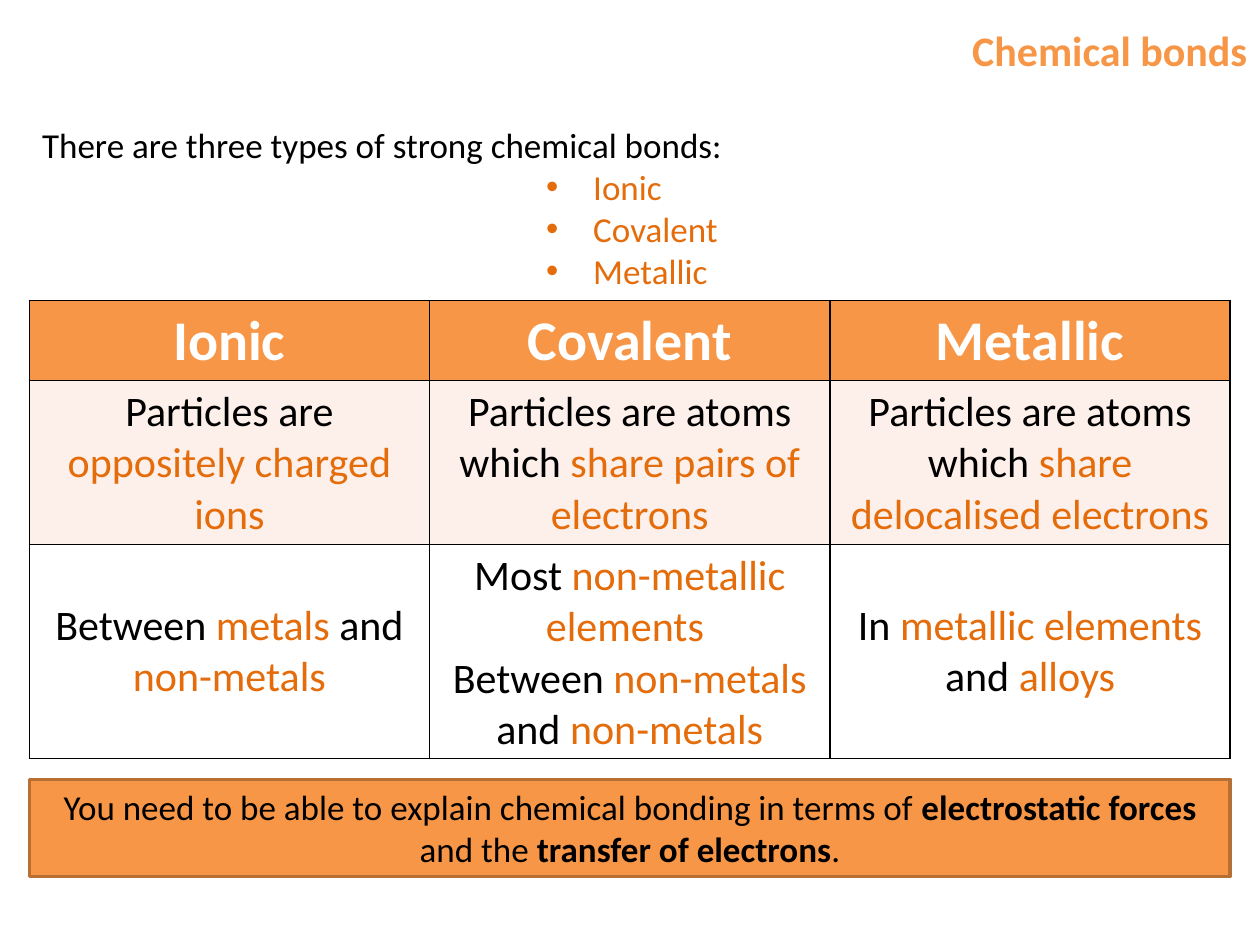
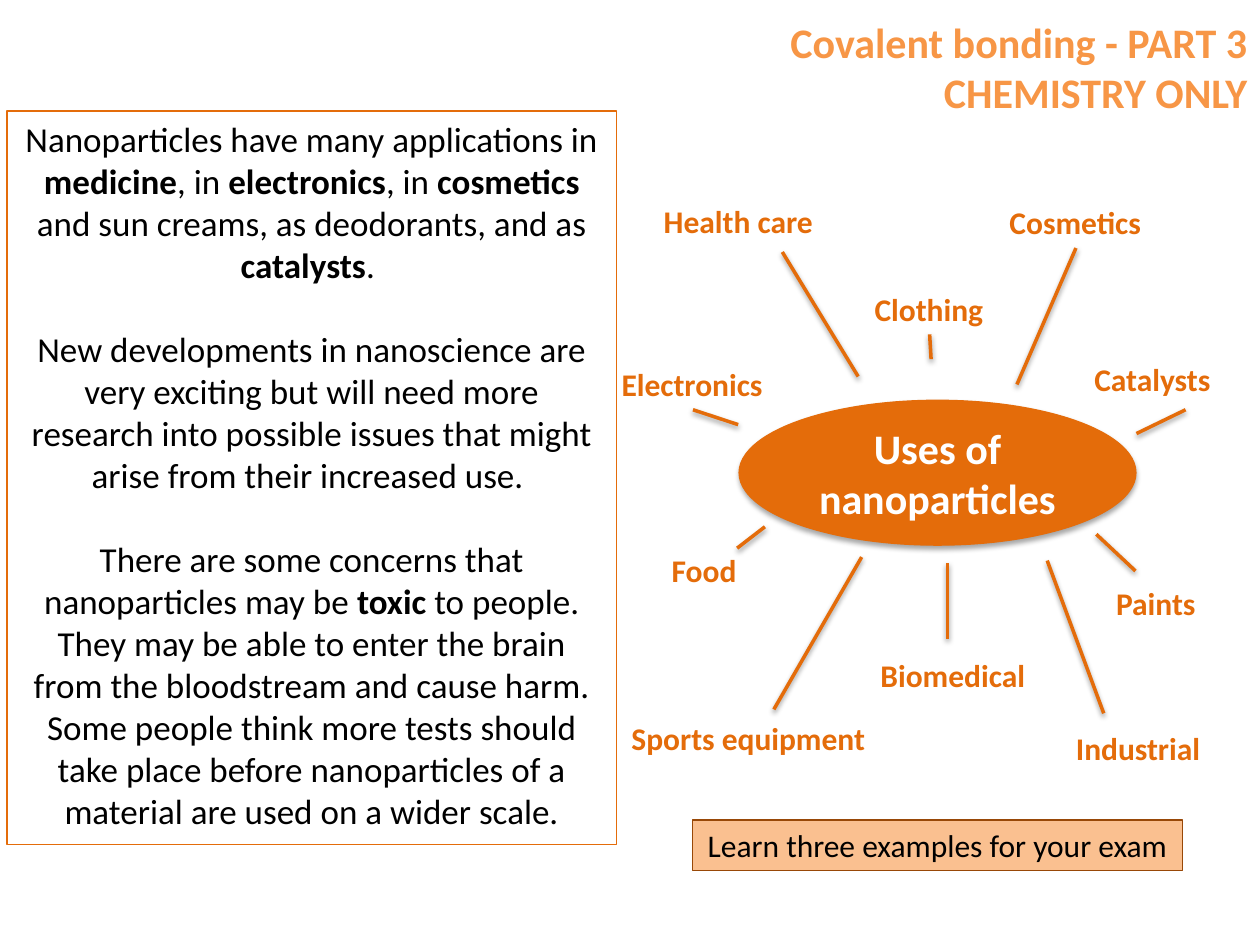
import pptx
import pptx.dml.color
import pptx.enum.shapes
import pptx.enum.text
import pptx.oxml
import pptx.oxml.ns
import pptx.util
from lxml import etree

Cm = pptx.util.Cm
Pt = pptx.util.Pt
RGBColor = pptx.dml.color.RGBColor
ALIGN = pptx.enum.text.PP_ALIGN
ANCHOR = pptx.enum.text.MSO_ANCHOR
FIT = pptx.enum.text.MSO_AUTO_SIZE
SHAPE = pptx.enum.shapes.MSO_SHAPE
qn = pptx.oxml.ns.qn

ORANGE = RGBColor(0xF7, 0x96, 0x46)
DARK_ORANGE = RGBColor(0xE4, 0x6C, 0x0A)
BANNER_EDGE = RGBColor(0xB7, 0x6F, 0x34)
PEACH = RGBColor(0xFA, 0xC0, 0x90)
BROWN = RGBColor(0x98, 0x48, 0x07)
PALE = RGBColor(0xFD, 0xEF, 0xE9)
WHITE = RGBColor(0xFF, 0xFF, 0xFF)
BLACK = RGBColor(0, 0, 0)

BODY = dict(name="Calibri", size=Pt(20), bold=False, color=BLACK)
STRONG = dict(BODY, bold=True)
LIST_ITEM = dict(BODY, color=DARK_ORANGE)
TITLE = dict(STRONG, size=Pt(24), color=ORANGE)
HEADER = dict(STRONG, size=Pt(32), color=WHITE)
CELL = dict(BODY, size=Pt(24))
CELL_KEY = dict(CELL, color=DARK_ORANGE)
HUB = dict(STRONG, size=Pt(24), color=WHITE)
LABEL = dict(STRONG, size=Pt(18), color=DARK_ORANGE)
NOTE = dict(BODY, size=Pt(18))

BOND_TABLE = [
    ["Ionic", "Covalent", "Metallic"],
    ["Particles are |oppositely charged ions",
     "Particles are atoms which |share pairs of electrons",
     "Particles are atoms which |share delocalised electrons"],
    ["Between |metals| and |non-metals",
     "Most |non-metallic elements \nBetween |non-metals| and |non-metals",
     "In |metallic elements| and |alloys"],
]

NANO_TEXT = [
    "Nanoparticles have many applications in |medicine|, in |electronics|, in "
    "|cosmetics |and sun creams, as deodorants, and as |catalysts|. ",
    "New developments in nanoscience are very exciting but will need more research "
    "into possible issues that might arise from their increased use. ",
    "There are some concerns that nanoparticles may be| toxic |to people. They may be "
    "able to enter the brain from the bloodstream and cause harm. Some people think more "
    "tests should take place before nanoparticles of a material are used on a wider scale.",
]

USES = [
    ("Health care", (13.13, 3.95, 3.56), (17.3, 7.59, 15.77, 5.08)),
    ("Clothing", (17.38, 5.72, 2.72), (18.75, 6.76, 18.77, 7.24)),
    ("Electronics", (12.28, 7.24, 3.38), (13.97, 8.26, 14.88, 8.56)),
    ("Sports equipment", (12.48, 14.38, 5.26), (17.37, 11.23, 15.6, 14.3)),
    ("Cosmetics", (20.1, 3.96, 3.18), (20.5, 7.75, 21.69, 5.0)),
    ("Catalysts", (21.81, 7.14, 2.87), (22.91, 8.74, 23.9, 8.26)),
    ("Biomedical", (17.5, 13.11, 3.45), (19.1, 11.35, 19.1, 12.88)),
    ("Paints", (22.25, 11.65, 2.13), (22.1, 10.77, 22.89, 11.51)),
    ("Food", (13.29, 10.98, 1.83), (15.42, 10.62, 14.86, 11.05)),
    ("Industrial", (21.44, 14.58, 3.02), (21.11, 11.3, 22.25, 14.38)),
]
JOINED_USES = ("Clothing", "Electronics")
LABEL_HEIGHT = 1.02


def set_font(font, fmt):
    for key, value in fmt.items():
        if key == "color":
            font.color.rgb = value
        else:
            setattr(font, key, value)


def fill_text(tf, paragraphs, fmt, key_fmt=None, align=ALIGN.LEFT, gap=0):
    for i, text in enumerate(paragraphs):
        p = tf.paragraphs[0] if i == 0 else tf.add_paragraph()
        p.alignment = align
        if i and gap:
            p.space_before = Pt(gap)
        for n, part in enumerate(text.split("|")):
            r = p.add_run()
            r.text = part
            set_font(r.font, key_fmt if n % 2 else fmt)


def add_title(prs, text, box):
    s = prs.slides.add_slide(prs.slide_layouts[5])
    sp = s.shapes.title
    sp.left, sp.top, sp.width, sp.height = map(Cm, box)
    tf = sp.text_frame
    for key, value in dict(word_wrap=True, auto_size=FIT.NONE,
                           vertical_anchor=ANCHOR.MIDDLE).items():
        setattr(tf, key, value)
    p = tf.paragraphs[0]
    p.text = text
    p.alignment = ALIGN.RIGHT
    for r in p.runs:
        set_font(r.font, TITLE)
    return s


def add_box(s, box, paragraphs, fmt, wrap=True, fill=None, line=None, margin=0.25,
            **text_args):
    sp = s.shapes.add_textbox(*map(Cm, box))
    tf = sp.text_frame
    for key, value in dict(word_wrap=wrap, auto_size=FIT.SHAPE_TO_FIT_TEXT,
                           margin_left=Cm(margin), margin_right=Cm(margin)).items():
        setattr(tf, key, value)
    if fill:
        sp.fill.solid()
        sp.fill.fore_color.rgb = fill
    if line:
        sp.line.color.rgb, sp.line.width = line
    fill_text(tf, paragraphs, fmt, **text_args)
    return sp


def add_bullet(p):
    pPr = p._p.get_or_add_pPr()
    pPr.set("marL", str(Cm(11.11)))
    pPr.set("indent", str(-Cm(0.95)))
    etree.SubElement(pPr, qn("a:buFont"), typeface="Arial")
    etree.SubElement(pPr, qn("a:buChar"), char="•")


def add_shadow(sp, alpha, distance):
    effects = etree.SubElement(sp._element.spPr, qn("a:effectLst"))
    shadow = etree.SubElement(effects, qn("a:outerShdw"), blurRad=str(Pt(3.1)),
                              dist=str(Pt(distance)), dir="5400000", rotWithShape="0")
    color = etree.SubElement(shadow, qn("a:srgbClr"), val=str(BLACK))
    etree.SubElement(color, qn("a:alpha"), val=str(alpha * 1000))


def add_borders(cell):
    tcPr = cell._tc.get_or_add_tcPr()
    for side in ("lnL", "lnR", "lnT", "lnB"):
        ln = etree.SubElement(tcPr, qn("a:" + side), w=str(Pt(1)))
        fill = etree.SubElement(ln, qn("a:solidFill"))
        etree.SubElement(fill, qn("a:srgbClr"), val=str(BLACK))


def add_bond_table(s):
    heights = (1.61, 3.3, 4.32)
    table = s.shapes.add_table(3, 3, Cm(0.59), Cm(6.06), Cm(24.21), Cm(sum(heights))).table
    for row, height, texts, fill in zip(table.rows, heights, BOND_TABLE,
                                        (ORANGE, PALE, WHITE)):
        row.height = Cm(height)
        for cell, text in zip(row.cells, texts):
            add_borders(cell)
            cell.fill.solid()
            cell.fill.fore_color.rgb = fill
            cell.vertical_anchor = ANCHOR.MIDDLE
            fmt = HEADER if fill == ORANGE else CELL
            fill_text(cell.text_frame, text.split("\n"), fmt, key_fmt=CELL_KEY,
                      align=ALIGN.CENTER)


def add_hub(s, text):
    sp = s.shapes.add_shape(SHAPE.OVAL, Cm(14.9), Cm(8.07), Cm(8), Cm(2.92))
    sp.fill.solid()
    sp.fill.fore_color.rgb = DARK_ORANGE
    sp.line.color.rgb = DARK_ORANGE
    sp.line.width = Pt(0.75)
    add_shadow(sp, 35, 1.8)
    sp.text_frame.word_wrap = True
    sp.text_frame.vertical_anchor = ANCHOR.MIDDLE
    fill_text(sp.text_frame, [text], HUB, align=ALIGN.CENTER)


def add_use(s, text, place, ends):
    label = add_box(s, (*place, LABEL_HEIGHT), [text], LABEL, wrap=False)
    line = s.shapes.add_connector(pptx.enum.shapes.MSO_CONNECTOR.STRAIGHT, *map(Cm, ends))
    if text in JOINED_USES:
        line.begin_connect(label, 2)
    line.line.color.rgb = DARK_ORANGE
    line.line.width = Pt(2)
    add_shadow(line, 38, 1.6)


def build_bonds(prs):
    s = add_title(prs, "Chemical bonds", (1.7, 0.09, 23.7, 1.83))
    sp = add_box(s, (0.6, 2.36, 24.2, 3.68),
                 ["There are three types of strong chemical bonds:"], BODY)
    for bond in BOND_TABLE[0]:
        p = sp.text_frame.add_paragraph()
        add_bullet(p)
        r = p.add_run()
        r.text = bond
        set_font(r.font, LIST_ITEM)
    add_bond_table(s)
    add_box(s, (0.6, 15.71, 24.2, 1.96),
            ["You need to be able to explain chemical bonding in terms of "
             "|electrostatic forces |and the |transfer of electrons|."],
            BODY, key_fmt=STRONG, align=ALIGN.CENTER, fill=ORANGE, line=(BANNER_EDGE, Pt(2)))


def build_nanoparticles(prs):
    s = add_title(prs, "Covalent bonding - PART 3\nCHEMISTRY ONLY", (0, 0.1, 25.4, 2.49))
    add_box(s, (0.14, 2.24, 12.29, 14.78), NANO_TEXT, BODY, key_fmt=STRONG, margin=0.35,
            align=ALIGN.CENTER, gap=24, line=(DARK_ORANGE, Pt(0.75)))
    add_hub(s, "Uses of nanoparticles")
    for use in USES:
        add_use(s, *use)
    add_box(s, (13.96, 16.53, 9.88, LABEL_HEIGHT), ["Learn three examples for your exam"],
            NOTE, wrap=False, align=ALIGN.CENTER, fill=PEACH, line=(BROWN, Pt(0.75)))


def main():
    prs = pptx.Presentation()
    prs.slide_width, prs.slide_height = Cm(25.4), Cm(19.05)
    build_bonds(prs)
    build_nanoparticles(prs)
    prs.save("out.pptx")


if __name__ == "__main__":
    main()
